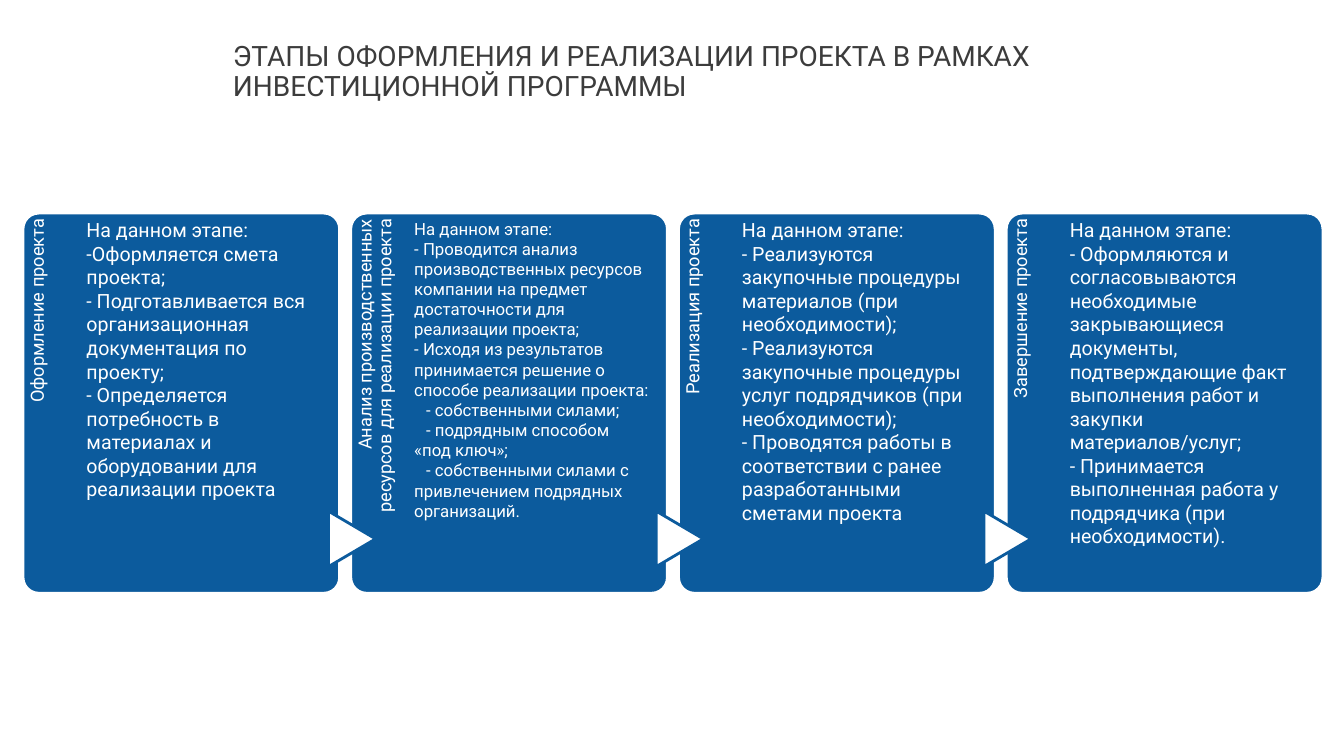
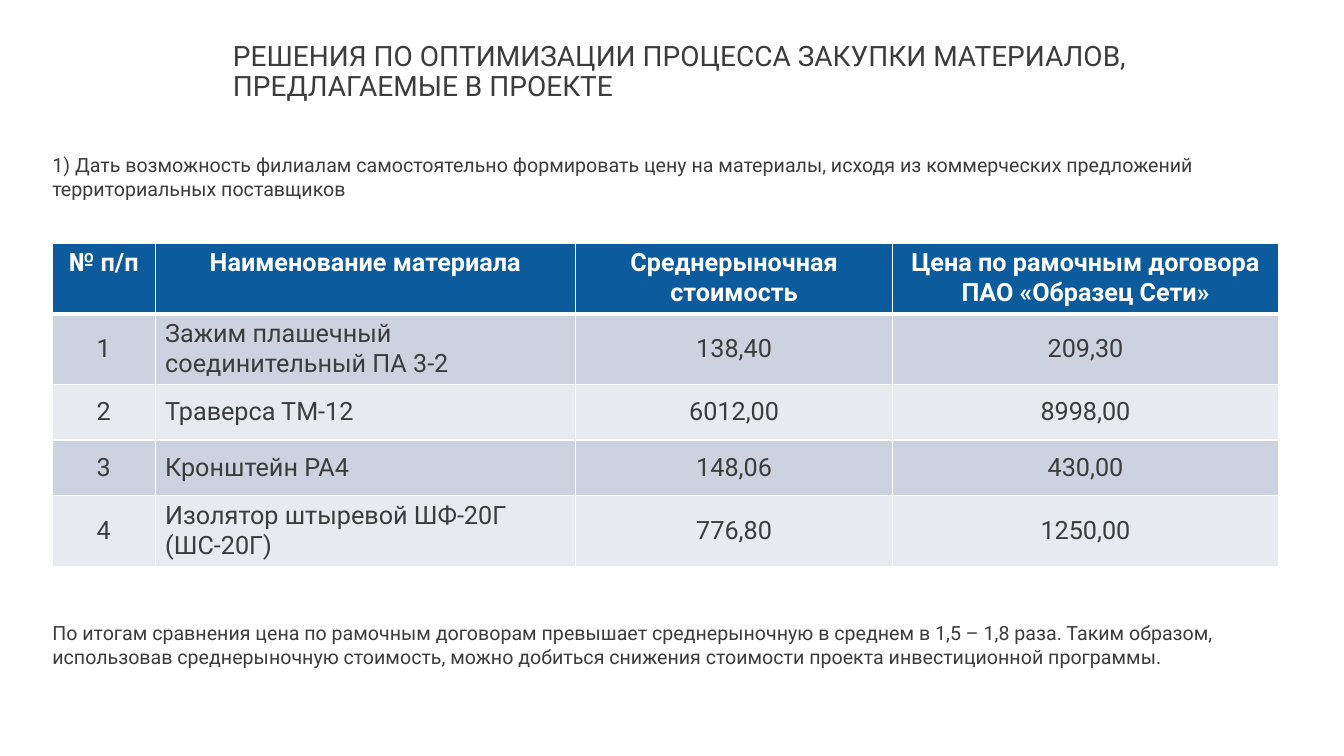
from collections import namedtuple

from lxml import etree
from pptx import Presentation
from pptx.dml.color import RGBColor
from pptx.enum.shapes import MSO_SHAPE
from pptx.enum.text import MSO_ANCHOR, MSO_AUTO_SIZE, PP_ALIGN
from pptx.oxml.ns import qn
from pptx.util import Cm, Pt

LEFT, CENTER, RIGHT = PP_ALIGN.LEFT, PP_ALIGN.CENTER, PP_ALIGN.RIGHT
TOP, MIDDLE = MSO_ANCHOR.TOP, MSO_ANCHOR.MIDDLE
FIXED, GROW = MSO_AUTO_SIZE.NONE, MSO_AUTO_SIZE.SHAPE_TO_FIT_TEXT
ROUNDED, TRIANGLE = MSO_SHAPE.ROUNDED_RECTANGLE, MSO_SHAPE.FLOWCHART_EXTRACT
TITLE_ONLY = 5

FONT = "Roboto"
BLUE, WHITE, INK = "0C5B9D", "FFFFFF", "3C3C3C"
BANDS = ("CCD2DF", "E7EAEF")

CARD_LEFT, CARD_TOP, CARD_PITCH = 0.58, 5.37, 8.26
CARD_WIDTH, CARD_HEIGHT = 7.98, 9.58
LABEL_WIDTH, LABEL_LENGTH = 1.6, 7.85
BODY_WIDTH = 5.94
ARROW_DEPTH, ARROW_SPAN, ARROW_MIDDLE = 1.19, 1.4, 13.58
CONTENT_LEFT, CONTENT_WIDTH = 1.32, 30.89

Stage = namedtuple("Stage", "label size steps options", defaults=[()])

STAGES = [
    Stage("Оформление проекта", 14, (
        "На данном этапе:",
        "-Оформляется смета проекта;",
        "- Подготавливается вся организационная документация по проекту;",
        "- Определяется потребность в материалах и оборудовании для реализации проекта",
    )),
    Stage("Анализ производственных ресурсов для реализации проекта", 12, (
        "На данном этапе:",
        "- Проводится анализ производственных ресурсов компании на предмет "
        "достаточности для реализации проекта;",
        "- Исходя из результатов принимается решение о способе реализации проекта:",
    ), (
        "- собственными силами;",
        "- подрядным способом «под ключ»;",
        "- собственными силами с привлечением подрядных организаций.",
    )),
    Stage("Реализация проекта", 14, (
        "На данном этапе:",
        "- Реализуются закупочные процедуры материалов (при необходимости);",
        "- Реализуются закупочные процедуры услуг подрядчиков (при необходимости);",
        "- Проводятся работы в соответствии с ранее разработанными сметами проекта",
    )),
    Stage("Завершение проекта", 14, (
        "На данном этапе:",
        "- Оформляются и согласовываются необходимые закрывающиеся документы, "
        "подтверждающие факт выполнения работ и закупки материалов/услуг;",
        "- Принимается выполненная работа у подрядчика (при необходимости).",
    )),
]

PRICES = [
    ("№ п/п", "Наименование материала", "Среднерыночная стоимость",
     "Цена по рамочным договора ПАО «Образец Сети»"),
    ("1", "Зажим плашечный соединительный ПА 3-2", "138,40", "209,30"),
    ("2", "Траверса ТМ-12", "6012,00", "8998,00"),
    ("3", "Кронштейн РА4", "148,06", "430,00"),
    ("4", "Изолятор штыревой ШФ-20Г (ШС-20Г)", "776,80", "1250,00"),
]
PRICE_COLUMNS = (2.59, 10.59, 8, 9.71)
PRICE_ROWS = (1.77, 1.77, 1.4, 1.4, 1.77)


def rgb(value):
    return RGBColor.from_string(value)


def write(frame, lines, size=14, color=INK, bold=False, align=LEFT,
          spacing=None, anchor=TOP, margins=None, fit=None, indented=()):
    frame.word_wrap = True
    frame.vertical_anchor = anchor
    if fit is not None:
        frame.auto_size = fit
    if margins is not None:
        (frame.margin_left, frame.margin_top,
         frame.margin_right, frame.margin_bottom) = map(Cm, margins)
    for index, line in enumerate([*lines, *indented]):
        paragraph = frame.add_paragraph() if index else frame.paragraphs[0]
        if index >= len(lines):
            paragraph._p.get_or_add_pPr().set("indent", str(Cm(0.3)))
        paragraph.alignment = align
        if spacing:
            paragraph.line_spacing = spacing
        run = paragraph.add_run()
        run.text = line
        run.font.name = FONT
        run.font.size = Pt(size)
        run.font.bold = bold
        run.font.color.rgb = rgb(color)


def turned(left, top, width, height):
    shift = (width - height) / 2
    return left + shift, top - shift, height, width


class Deck:
    def __init__(self):
        self.presentation = Presentation()
        self.presentation.slide_width = Cm(33.87)
        self.presentation.slide_height = Cm(19.05)
        self.slide = None

    def start(self, heading):
        layout = self.presentation.slide_layouts[TITLE_ONLY]
        self.slide = self.presentation.slides.add_slide(layout)
        title = self.slide.shapes.title
        title.left, title.top, title.width, title.height = map(
            Cm, (5.87, 1.07, 26.37, 1.19))
        write(title.text_frame, [heading], size=20, spacing=0.9,
              margins=(0, 0, 0, 0), fit=FIXED)

    def text(self, box, lines, rotation=0, **style):
        area = self.slide.shapes.add_textbox(*map(Cm, box))
        area.rotation = rotation
        write(area.text_frame, lines, **style)

    def shape(self, kind, box, fill, line, rotation=0):
        figure = self.slide.shapes.add_shape(kind, *map(Cm, box))
        figure.shadow.inherit = False
        figure.fill.solid()
        figure.fill.fore_color.rgb = rgb(fill)
        figure.line.color.rgb = rgb(line)
        figure.line.width = Pt(2)
        figure.rotation = rotation
        return figure

    def note(self, top, line):
        self.text((CONTENT_LEFT, top, CONTENT_WIDTH, 1.45), [line],
                  margins=(0, 0.13, 0, 0.13), fit=GROW)

    def stage(self, left, stage, arrow):
        card = self.shape(ROUNDED, (left, CARD_TOP, CARD_WIDTH, CARD_HEIGHT),
                          BLUE, WHITE)
        card.adjustments[0] = 0.05
        self.text(turned(left, CARD_TOP, LABEL_WIDTH, LABEL_LENGTH),
                  [stage.label], rotation=270, size=13, color=WHITE,
                  align=RIGHT, spacing=0.9, margins=(0, 0.13, 0.15, 0))
        if arrow:
            self.shape(TRIANGLE,
                       turned(left - ARROW_DEPTH / 2 + 0.03,
                              ARROW_MIDDLE - ARROW_SPAN / 2,
                              ARROW_DEPTH, ARROW_SPAN),
                       WHITE, BLUE, rotation=90)
        self.text((left + LABEL_WIDTH, CARD_TOP, BODY_WIDTH, CARD_HEIGHT),
                  stage.steps, size=stage.size, color=WHITE,
                  margins=(0, 0.13, 0, 0), indented=stage.options)

    def border(self, cell, header):
        properties = cell._tc.get_or_add_tcPr()
        for side in ("lnL", "lnR", "lnT", "lnB"):
            width = Pt(3 if header and side == "lnB" else 1)
            edge = etree.SubElement(properties, qn(f"a:{side}"), w=str(width))
            paint = etree.SubElement(edge, qn("a:solidFill"))
            etree.SubElement(paint, qn("a:srgbClr"), val=WHITE)

    def table(self, top, rows, widths, heights):
        grid = self.slide.shapes.add_table(
            len(rows), len(widths), Cm(CONTENT_LEFT), Cm(top),
            Cm(sum(widths)), Cm(sum(heights))).table
        grid.horz_banding = False
        for column, width in zip(grid.columns, widths):
            column.width = Cm(width)
        for r, (values, height) in enumerate(zip(rows, heights)):
            grid.rows[r].height = Cm(height)
            header = r == 0
            for c, value in enumerate(values):
                cell = grid.cell(r, c)
                self.border(cell, header)
                cell.fill.solid()
                cell.fill.fore_color.rgb = rgb(
                    BLUE if header else BANDS[(r - 1) % 2])
                cell.vertical_anchor = TOP if header else MIDDLE
                write(cell.text_frame, [value], size=18, bold=header,
                      color=WHITE if header else INK,
                      align=LEFT if c == 1 and not header else CENTER,
                      anchor=cell.vertical_anchor)


def main():
    deck = Deck()

    deck.start("ЭТАПЫ ОФОРМЛЕНИЯ И РЕАЛИЗАЦИИ ПРОЕКТА В РАМКАХ "
               "ИНВЕСТИЦИОННОЙ ПРОГРАММЫ")
    for index, stage in enumerate(STAGES):
        deck.stage(CARD_LEFT + index * CARD_PITCH, stage, arrow=index > 0)

    deck.start("РЕШЕНИЯ ПО ОПТИМИЗАЦИИ ПРОЦЕССА ЗАКУПКИ МАТЕРИАЛОВ, "
               "ПРЕДЛАГАЕМЫЕ В ПРОЕКТЕ")
    deck.note(3.73, "1) Дать возможность филиалам самостоятельно формировать "
              "цену на материалы, исходя из коммерческих предложений "
              "территориальных поставщиков")
    deck.table(6.13, PRICES, PRICE_COLUMNS, PRICE_ROWS)
    deck.note(15.52, "По итогам сравнения цена по рамочным договорам превышает "
              "среднерыночную в среднем в 1,5 – 1,8 раза. Таким образом, "
              "использовав среднерыночную стоимость, можно добиться снижения "
              "стоимости проекта инвестиционной программы.")

    deck.presentation.save("out.pptx")


if __name__ == "__main__":
    main()
